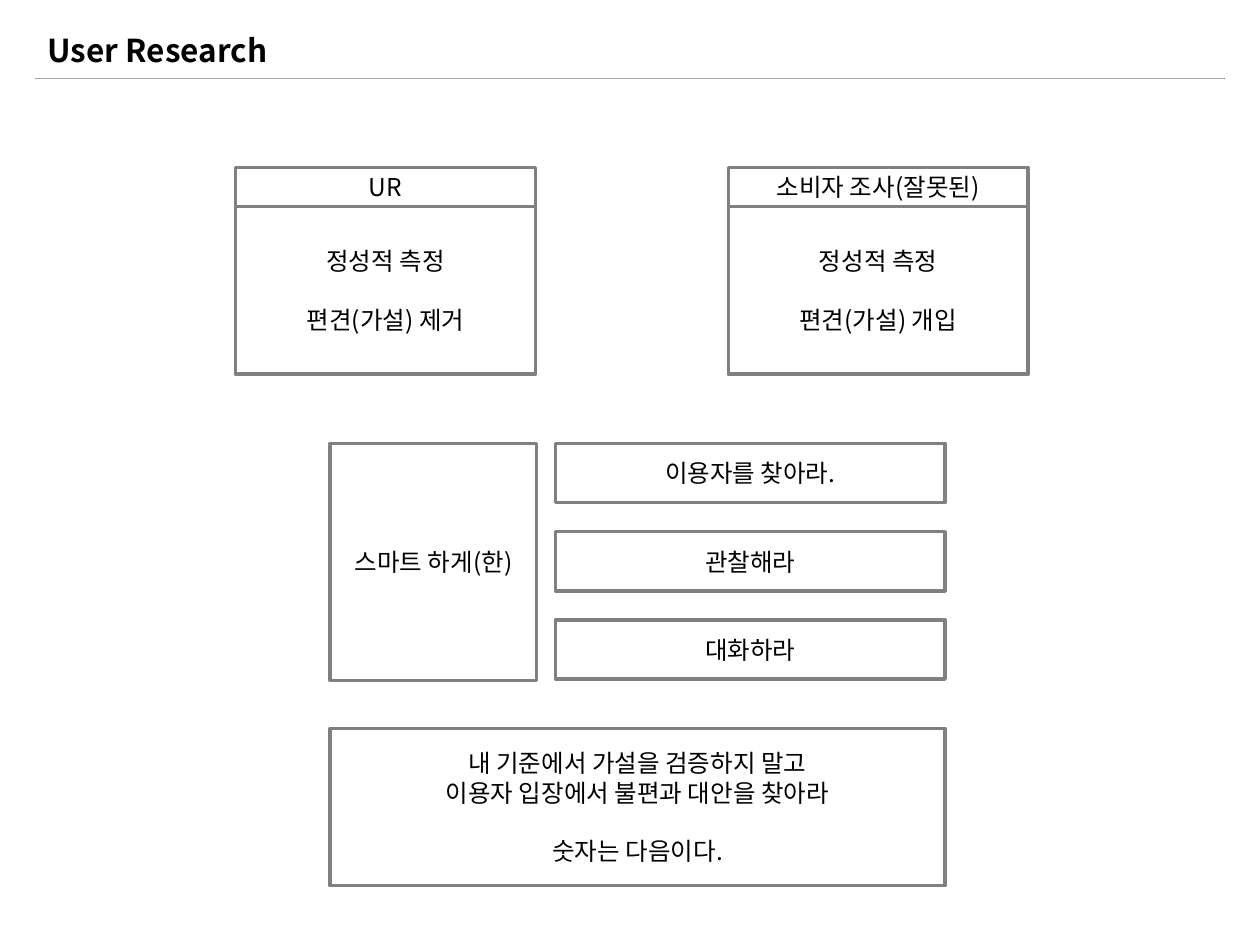
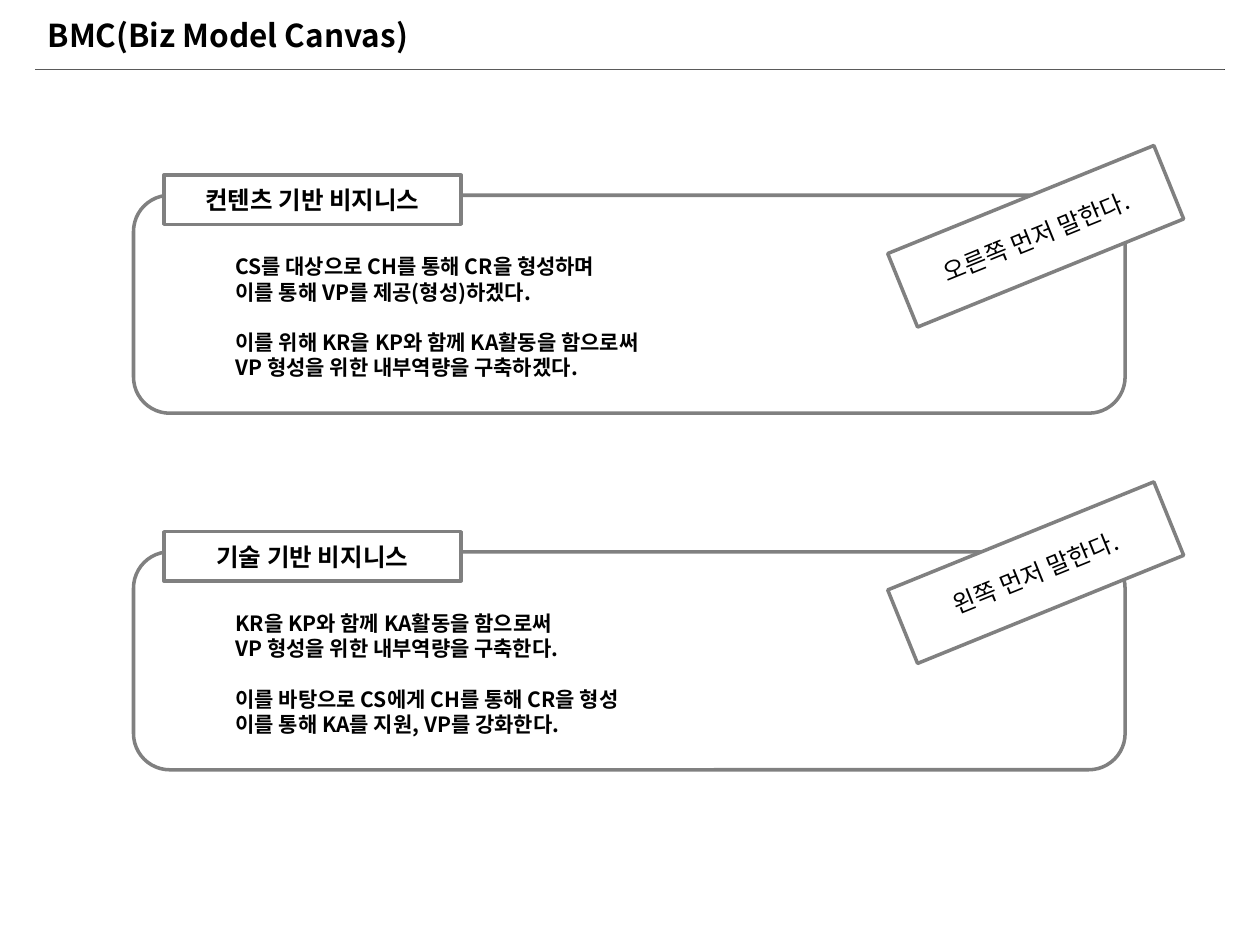
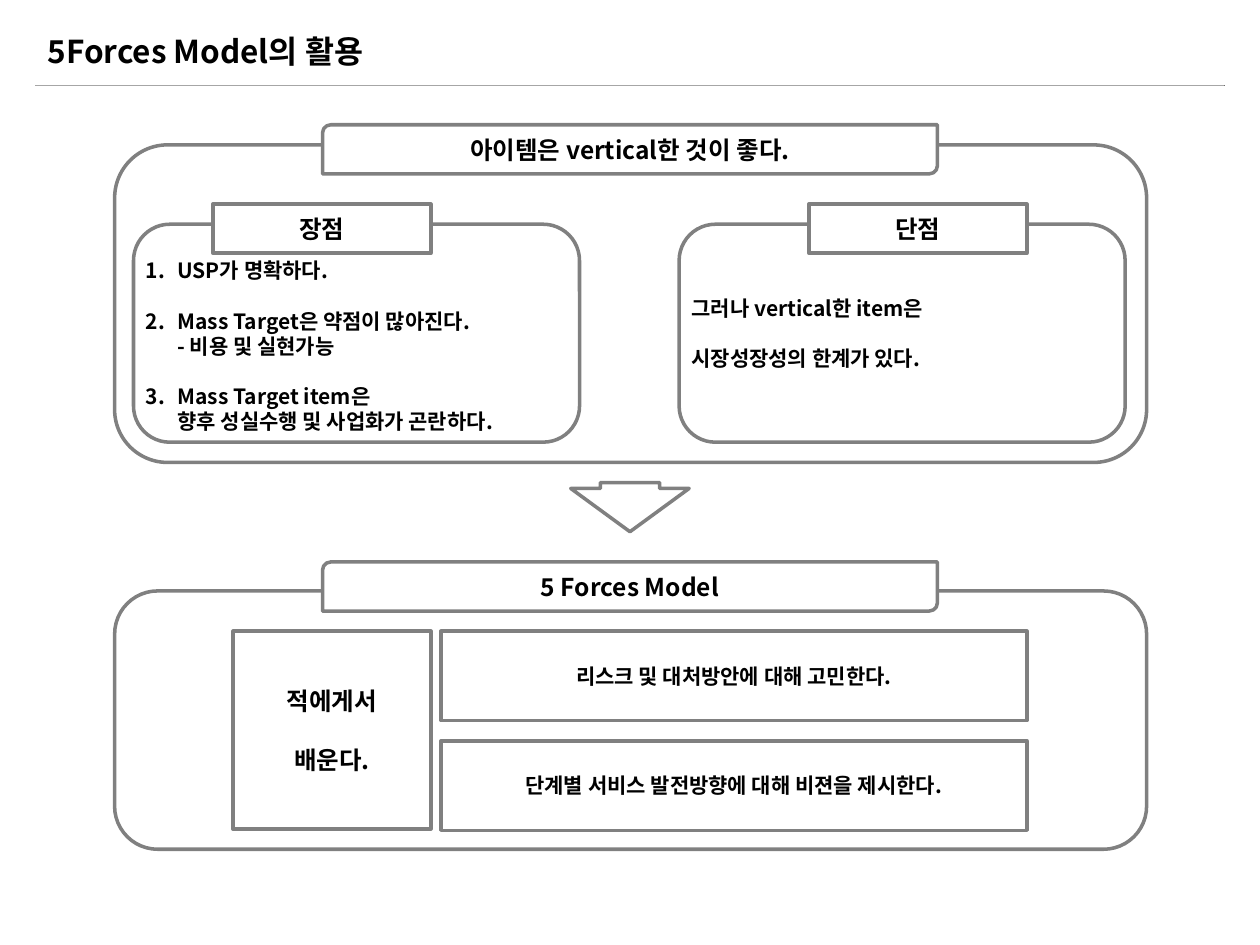
import pptx
import pptx.util
import pptx.dml.color
import pptx.enum.shapes
import pptx.enum.text
import pptx.oxml.ns
import lxml.etree

BLACK = pptx.dml.color.RGBColor(0x00, 0x00, 0x00)
GRAY = pptx.dml.color.RGBColor(0x80, 0x80, 0x80)
WHITE = pptx.dml.color.RGBColor(0xFF, 0xFF, 0xFF)
FONT = "Noto Sans CJK KR"
LINE_SPACING = 1.2

RECTANGLE = pptx.enum.shapes.MSO_SHAPE.RECTANGLE
ROUNDED = pptx.enum.shapes.MSO_SHAPE.ROUNDED_RECTANGLE
DIAGONAL = pptx.enum.shapes.MSO_SHAPE.ROUND_2_DIAG_RECTANGLE
ARROW = pptx.enum.shapes.MSO_SHAPE.DOWN_ARROW
LEFT = pptx.enum.text.PP_ALIGN.LEFT
CENTER = pptx.enum.text.PP_ALIGN.CENTER

presentation = pptx.Presentation()
presentation.slide_width = pptx.util.Inches(10)
presentation.slide_height = pptx.util.Inches(7.5)
UNIT = presentation.slide_width / 100


def add_box(slide, left, top, width, height, blocks=(), kind=RECTANGLE, size=14,
            bold=False, align=CENTER, outlined=True, filled=True, numbered=False):
    shape = slide.shapes.add_shape(
        kind, *[round(length * UNIT) for length in (left, top, width, height)])
    shape.shadow.inherit = False
    if filled:
        shape.fill.solid()
        shape.fill.fore_color.rgb = WHITE
    else:
        shape.fill.background()
    if outlined:
        shape.line.color.rgb = GRAY
        shape.line.width = pptx.util.Pt(2)
    else:
        shape.line.fill.background()
    frame = shape.text_frame
    frame.word_wrap = True
    frame.vertical_anchor = pptx.enum.text.MSO_ANCHOR.MIDDLE
    lines = [(block, row, line) for block, text in enumerate(blocks)
             for row, line in enumerate(text.split("\n"))]
    for index, (block, row, line) in enumerate(lines):
        paragraph = frame.paragraphs[0] if index == 0 else frame.add_paragraph()
        paragraph.text = line
        paragraph.alignment = align
        if block > 0 and row == 0:
            paragraph.space_before = pptx.util.Pt(size * LINE_SPACING)
        properties = paragraph._p.get_or_add_pPr()
        if numbered:
            indent = pptx.util.Inches(0.25)
            properties.set("marL", str(indent))
            properties.set("indent", str(-indent))
            bullet = lxml.etree.SubElement(properties, pptx.oxml.ns.qn("a:buAutoNum"))
            bullet.set("type", "arabicPeriod")
        paragraph.font.size = pptx.util.Pt(size)
        paragraph.font.bold = bold
        paragraph.font.color.rgb = BLACK
        paragraph.font.name = FONT
        defaults = properties.find(pptx.oxml.ns.qn("a:defRPr"))
        lxml.etree.SubElement(defaults, pptx.oxml.ns.qn("a:ea")).set("typeface", FONT)
    return shape


def add_titled_slide(title, top, height):
    slide = presentation.slides.add_slide(presentation.slide_layouts[6])
    left, right = 2.8, 97.2
    rule = slide.shapes.add_connector(
        pptx.enum.shapes.MSO_CONNECTOR.STRAIGHT,
        *[round(length * UNIT) for length in (left, top + height, right, top + height)])
    rule.line.color.rgb = BLACK
    rule.line.width = pptx.util.Pt(0.75)
    lxml.etree.SubElement(rule._element.spPr, pptx.oxml.ns.qn("a:effectLst"))
    add_box(slide, left, top, right - left, height, [title],
            size=18, bold=True, align=LEFT, outlined=False)
    return slide


research = add_titled_slide("User Research", 1.6, 4.65)
for left, heading, bias in [(18.7, "UR", "편견(가설) 제거"),
                            (57.8, "소비자 조사(잘못된)", "편견(가설) 개입")]:
    add_box(research, left, 13.3, 23.8, 3.1, [heading])
    add_box(research, left, 16.4, 23.8, 13.3, ["정성적 측정", bias])
for row, step in enumerate(["이용자를 찾아라.", "관찰해라", "대화하라"]):
    add_box(research, 44.1, 35.2 + 7 * row, 30.9, 4.7, [step])
add_box(research, 26.2, 35.2, 16.4, 18.8, ["스마트 하게(한)"])
add_box(research, 26.2, 57.8, 48.8, 12.5,
        ["내 기준에서 가설을 검증하지 말고\n이용자 입장에서 불편과 대안을 찾아라", "숫자는 다음이다."])

canvas = add_titled_slide("BMC(Biz Model Canvas)", 0, 5.5)
businesses = [
    (15.5, 15.6, "컨텐츠 기반 비지니스", "오른쪽 먼저 말한다.",
     ["CS를 대상으로 CH를 통해 CR을 형성하며\n이를 통해 VP를 제공(형성)하겠다.",
      "이를 위해 KR을 KP와 함께 KA활동을 함으로써\nVP 형성을 위한 내부역량을 구축하겠다."]),
    (43.8, 42.3, "기술 기반 비지니스", "왼쪽 먼저 말한다.",
     ["KR을 KP와 함께 KA활동을 함으로써\nVP 형성을 위한 내부역량을 구축한다.",
      "이를 바탕으로 CS에게 CH를 통해 CR을 형성\n이를 통해 KA를 지원, VP를 강화한다."]),
]
for top, sticker_top, heading, order, story in businesses:
    body = add_box(canvas, 17.7, top, 64.6, 17.3, story,
                   size=12, bold=True, align=LEFT, outlined=False)
    body.text_frame.margin_top = pptx.util.Inches(0.25)
    add_box(canvas, 10.6, top, 78.7, 17.3, kind=ROUNDED, filled=False)
    add_box(canvas, 13, top - 1.6, 23.6, 3.9, [heading], bold=True)
    sticker = add_box(canvas, 70.8, sticker_top, 22.8, 6.3, [order])
    sticker.rotation = 337.9

forces = add_titled_slide("5Forces Model의 활용", 1.3, 5.5)
pros = ["USP가 명확하다.",
        "Mass Target은 약점이 많아진다.\v- 비용 및 실현가능",
        "Mass Target item은\v향후 성실수행 및 사업화가 곤란하다."]
cons = ["그러나 vertical한 item은", "시장성장성의 한계가 있다."]
for left, tab_left, heading, points, numbered, margin in [
        (10.6, 16.9, "장점", pros, True, 0.25),
        (53.9, 64.2, "단점", cons, False, 0.05)]:
    body = add_box(forces, left, 17.8, 35.4, 17.3, points, size=12, bold=True,
                   align=LEFT, outlined=False, numbered=numbered)
    body.text_frame.margin_top = pptx.util.Inches(margin)
    add_box(forces, left, 17.8, 35.4, 17.3, kind=ROUNDED, filled=False)
    add_box(forces, tab_left, 16.2, 17.3, 3.9, [heading], bold=True)
add_box(forces, 18.5, 50.1, 15.7, 15.7, ["적에게서", "배운다."], bold=True)
for row, advice in enumerate(["리스크 및 대처방안에 대해 고민한다.",
                              "단계별 서비스 발전방향에 대해 비젼을 제시한다."]):
    add_box(forces, 35, 50.1 + 8.7 * row, 46.5, 7.1, [advice], size=12, bold=True)
for top, height, heading_top, heading in [
        (11.5, 25.2, 9.9, "아이템은 vertical한 것이 좋다."),
        (46.9, 20.5, 44.6, "5 Forces Model")]:
    add_box(forces, 9.1, top, 81.9, height, kind=ROUNDED, filled=False)
    add_box(forces, 25.6, heading_top, 48.8, 3.9, [heading], kind=DIAGONAL, bold=True)
arrow = add_box(forces, 45.3, 38.3, 9.4, 3.9, kind=ARROW)
arrow.adjustments[0] = 0.5
arrow.adjustments[1] = 0.88

presentation.save("out.pptx")
